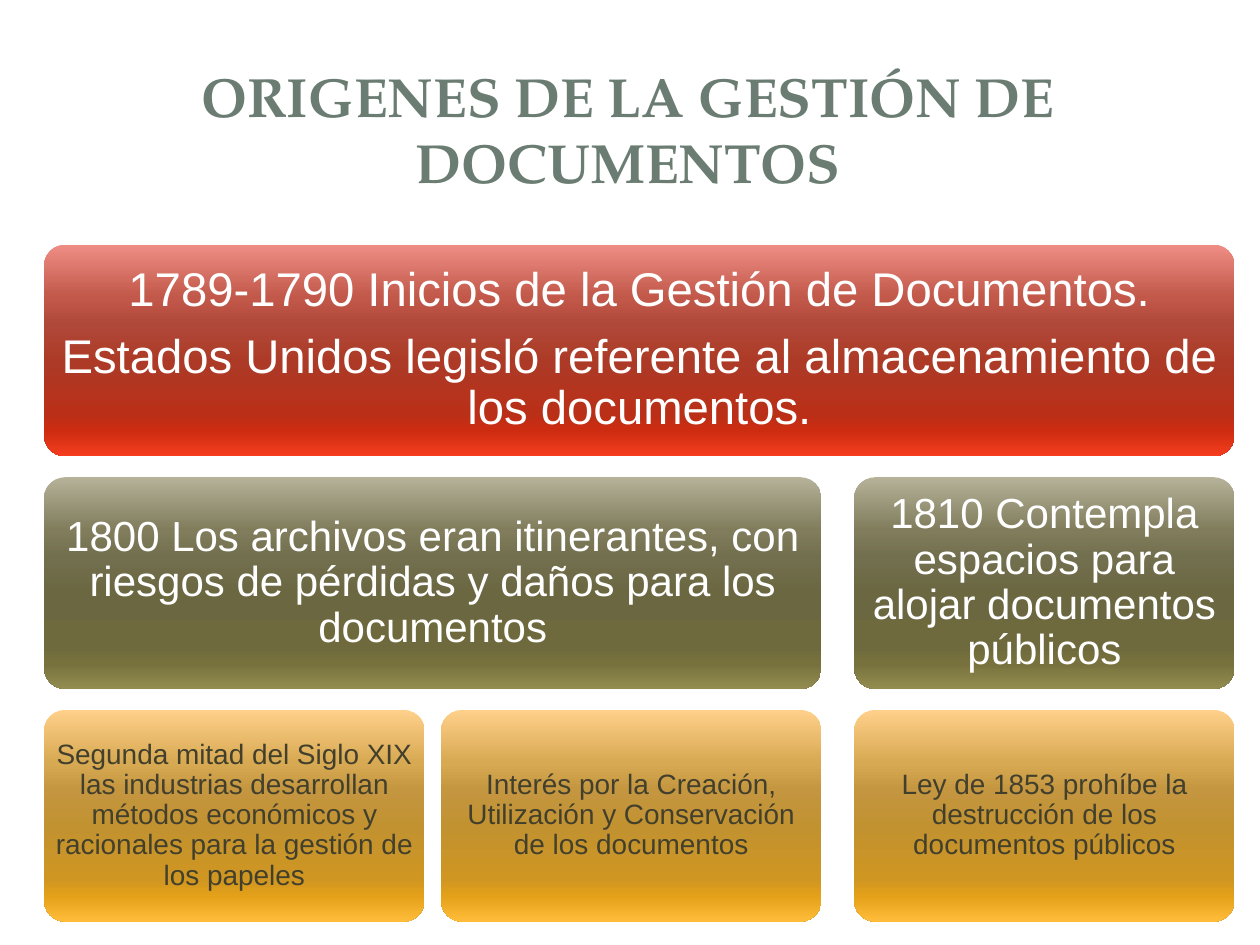
"""Build the slide on the origins of document management."""
import lxml.etree
import pptx
import pptx.dml.color
import pptx.enum.shapes
import pptx.enum.text
import pptx.oxml.ns
import pptx.util

Cm, Pt = pptx.util.Cm, pptx.util.Pt
CENTER = pptx.enum.text.PP_ALIGN.CENTER
MIDDLE = pptx.enum.text.MSO_ANCHOR.MIDDLE

COLORS = {
    "title": "6B7D72",
    "light": "FFFFFF",
    "dark": "42402C",
    "red": ["EF8E85", "C1584A", "B04839", "AD3A26", "BA2F18", "CD2C10", "F63D1F"],
    "olive": ["B5B299", "807C5C", "726F4F", "6B6741", "6E6A3D", "77723D", "928C50"],
    "amber": ["FFD08A", "D7A952", "C49640", "C29230", "CF9621", "E4A119", "FFBD3B"],
}
STOPS = [0, 25, 38, 55, 80, 88, 100]

COLUMN_LEFTS = [0.89, 8.89, 17.22]
COLUMN_WIDTH = 7.67
FIRST_ROW_TOP = 4.93
ROW_PITCH = 4.69
ROW_HEIGHT = 4.27

LEVELS = [
    {"gradient": "red", "text": "light", "size": 27, "inset": 0.15},
    {"gradient": "olive", "text": "light", "size": 24, "inset": 0.13},
    {"gradient": "amber", "text": "dark", "size": 16, "inset": 0.05},
]
EVENTS = [
    (0, 0, 2, ["1789-1790 Inicios de la Gestión de Documentos.",
               "Estados Unidos legisló referente al almacenamiento de los documentos."]),
    (1, 0, 1, ["1800 Los archivos eran itinerantes, con riesgos de pérdidas y daños "
               "para los documentos"]),
    (2, 0, 0, ["Segunda mitad del Siglo XIX las industrias desarrollan métodos "
               "económicos y racionales para la gestión de los papeles"]),
    (2, 1, 1, ["Interés por la Creación, Utilización y Conservación de los documentos"]),
    (1, 2, 2, ["1810 Contempla espacios para alojar documentos públicos"]),
    (2, 2, 2, ["Ley de 1853 prohíbe la destrucción de los documentos públicos"]),
]


def apply_format(target, values):
    for name, value in values.items():
        setattr(target, name, value)


def write_paragraph(paragraph, text, color, paragraph_format, font_format):
    run = paragraph.add_run()
    run.text = text
    apply_format(paragraph, {"alignment": CENTER, **paragraph_format})
    apply_format(run.font, font_format)
    run.font.color.rgb = pptx.dml.color.RGBColor.from_string(COLORS[color])


def fill_gradient(box, gradient):
    box.fill.gradient()
    box.fill.gradient_angle = 270
    qn = pptx.oxml.ns.qn
    stop_list = box.element.spPr.find(".//" + qn("a:gsLst"))
    for old_stop in list(stop_list):
        stop_list.remove(old_stop)
    for position, color in zip(STOPS, COLORS[gradient]):
        stop = lxml.etree.SubElement(stop_list, qn("a:gs"), pos=str(position * 1000))
        lxml.etree.SubElement(stop, qn("a:srgbClr"), val=color)


def add_title(slide, text):
    title = slide.shapes.title
    apply_format(title, {"left": Cm(1.19), "top": Cm(1.14),
                         "width": Cm(22.94), "height": Cm(2.9)})
    apply_format(title.text_frame, {"word_wrap": True, "vertical_anchor": MIDDLE,
                                    "auto_size": pptx.enum.text.MSO_AUTO_SIZE.NONE})
    write_paragraph(title.text_frame.paragraphs[0], text, "title", {},
                    {"name": "TeX Gyre Pagella", "size": Pt(31.5), "bold": True})


def add_event(slide, row, first_column, last_column, texts):
    level = LEVELS[row]
    left = COLUMN_LEFTS[first_column]
    width = COLUMN_LEFTS[last_column] + COLUMN_WIDTH - left
    box = slide.shapes.add_shape(
        pptx.enum.shapes.MSO_SHAPE.ROUNDED_RECTANGLE,
        Cm(left), Cm(FIRST_ROW_TOP + row * ROW_PITCH), Cm(width), Cm(ROW_HEIGHT))
    box.adjustments[0] = 0.1
    box.shadow.inherit = False
    box.line.fill.background()
    fill_gradient(box, level["gradient"])

    frame = box.text_frame
    apply_format(frame, {"word_wrap": True, "vertical_anchor": MIDDLE})
    sides = ("left", "top", "right", "bottom")
    apply_format(frame, {f"margin_{side}": Cm(level["inset"]) for side in sides})
    for index, text in enumerate(texts):
        paragraph = frame.add_paragraph() if index else frame.paragraphs[0]
        write_paragraph(paragraph, text, level["text"],
                        {"line_spacing": 0.9, "space_after": Pt(level["size"] / 3)},
                        {"name": "Arial", "size": Pt(level["size"])})


def main():
    presentation = pptx.Presentation()
    apply_format(presentation, {"slide_width": Cm(25.4), "slide_height": Cm(19.05)})
    slide = presentation.slides.add_slide(presentation.slide_layouts[5])
    add_title(slide, "ORIGENES DE LA GESTIÓN DE DOCUMENTOS")
    for event in EVENTS:
        add_event(slide, *event)
    presentation.save("out.pptx")


if __name__ == "__main__":
    main()
